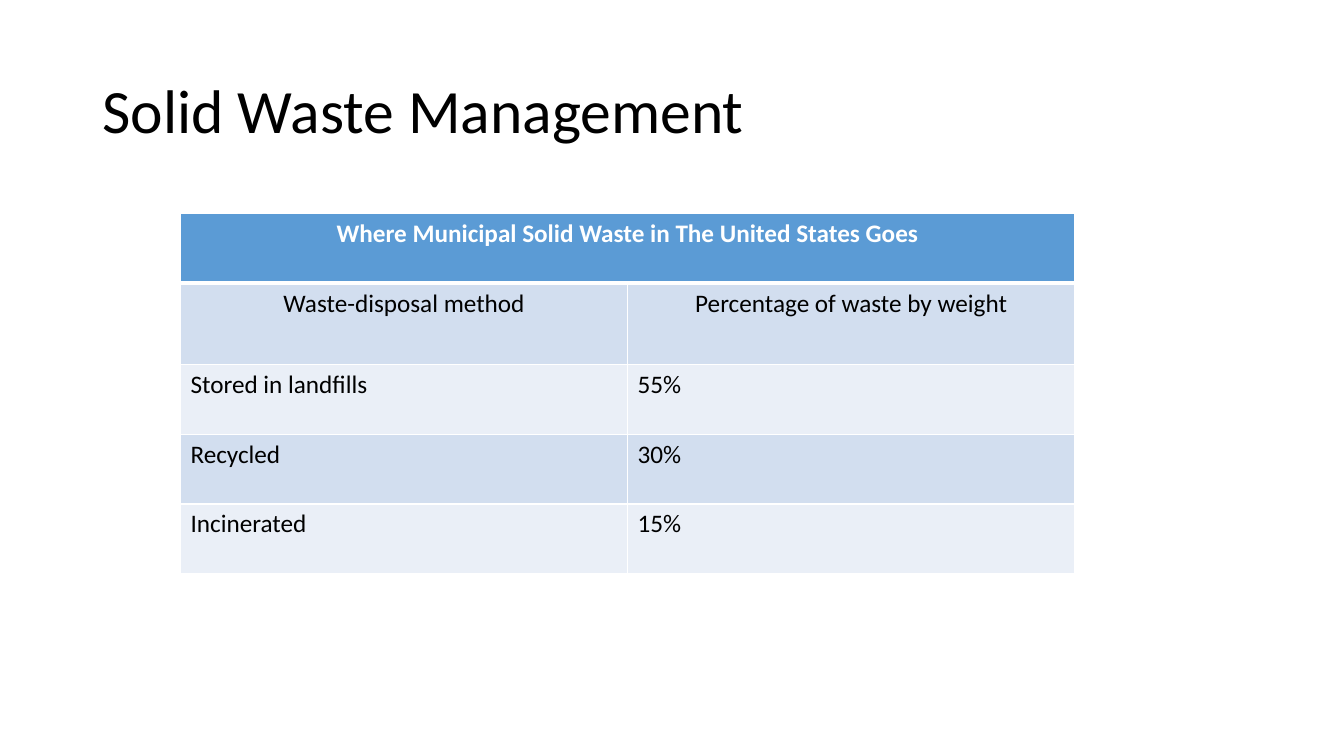
from pptx import Presentation
from pptx.dml.color import RGBColor
from pptx.enum.text import MSO_ANCHOR, PP_ALIGN
from pptx.oxml import parse_xml
from pptx.oxml.ns import nsdecls
from pptx.util import Inches, Pt

BLACK = RGBColor(0x00, 0x00, 0x00)
WHITE = RGBColor(0xFF, 0xFF, 0xFF)
BLUE = RGBColor(0x5B, 0x9B, 0xD5)
BAND_DARK = RGBColor(0xD2, 0xDE, 0xEF)
BAND_LIGHT = RGBColor(0xEA, 0xEF, 0xF7)

HEADING = "Where Municipal Solid Waste in The United States Goes"
ROWS = [
    (HEADING, ""),
    ("Waste-disposal method", "Percentage of waste by weight"),
    ("Stored in landfills", "55%"),
    ("Recycled", "30%"),
    ("Incinerated", "15%"),
]
ROW_HEIGHTS = [0.69, 0.81, 0.69, 0.69, 0.69]
COL_WIDTH = 4.435


def write(tf, text, size, color, bold=False, align=PP_ALIGN.LEFT):
    p = tf.paragraphs[0]
    p.alignment = align
    r = p.add_run()
    r.text = text
    formats = {"name": "Calibri", "size": Pt(size), "bold": bold}
    for key, value in formats.items():
        setattr(r.font, key, value)
    r.font.color.rgb = color
    return p


def add_title(s, text):
    box = s.shapes.add_textbox(Inches(0.92), Inches(0.4), Inches(11.5), Inches(1.45))
    tf = box.text_frame
    tf.word_wrap = True
    tf.vertical_anchor = MSO_ANCHOR.MIDDLE
    write(tf, text, 44, BLACK).line_spacing = 0.9


def set_borders(cell, widths):
    tcPr = cell._tc.get_or_add_tcPr()
    for side, width in widths.items():
        tcPr.append(parse_xml(
            f'<a:ln{side} {nsdecls("a")} w="{Pt(width)}"><a:solidFill>'
            f'<a:srgbClr val="{WHITE}"/></a:solidFill></a:ln{side}>'))


def fill_cell(cell, text, row):
    header = row == 0
    set_borders(cell, {"L": 1, "R": 1, "T": 3 if row == 1 else 1, "B": 3 if header else 1})
    cell.fill.solid()
    cell.fill.fore_color.rgb = BLUE if header else (BAND_LIGHT, BAND_DARK)[row % 2]
    if text:
        align = PP_ALIGN.CENTER if row < 2 else PP_ALIGN.LEFT
        write(cell.text_frame, text, 18, WHITE if header else BLACK, header, align)


def add_waste_table(s):
    table = s.shapes.add_table(
        len(ROWS), 2, Inches(1.79), Inches(2.12),
        Inches(2 * COL_WIDTH), Inches(sum(ROW_HEIGHTS))).table
    for column in table.columns:
        column.width = Inches(COL_WIDTH)
    for i, (height, texts) in enumerate(zip(ROW_HEIGHTS, ROWS)):
        table.rows[i].height = Inches(height)
        for j, text in enumerate(texts):
            fill_cell(table.cell(i, j), text, i)
    table.cell(0, 0).merge(table.cell(0, 1))


def main():
    prs = Presentation()
    prs.slide_width, prs.slide_height = Inches(13.33), Inches(7.5)
    s = prs.slides.add_slide(prs.slide_layouts[6])
    add_title(s, "Solid Waste Management")
    add_waste_table(s)
    prs.save("out.pptx")


if __name__ == "__main__":
    main()
